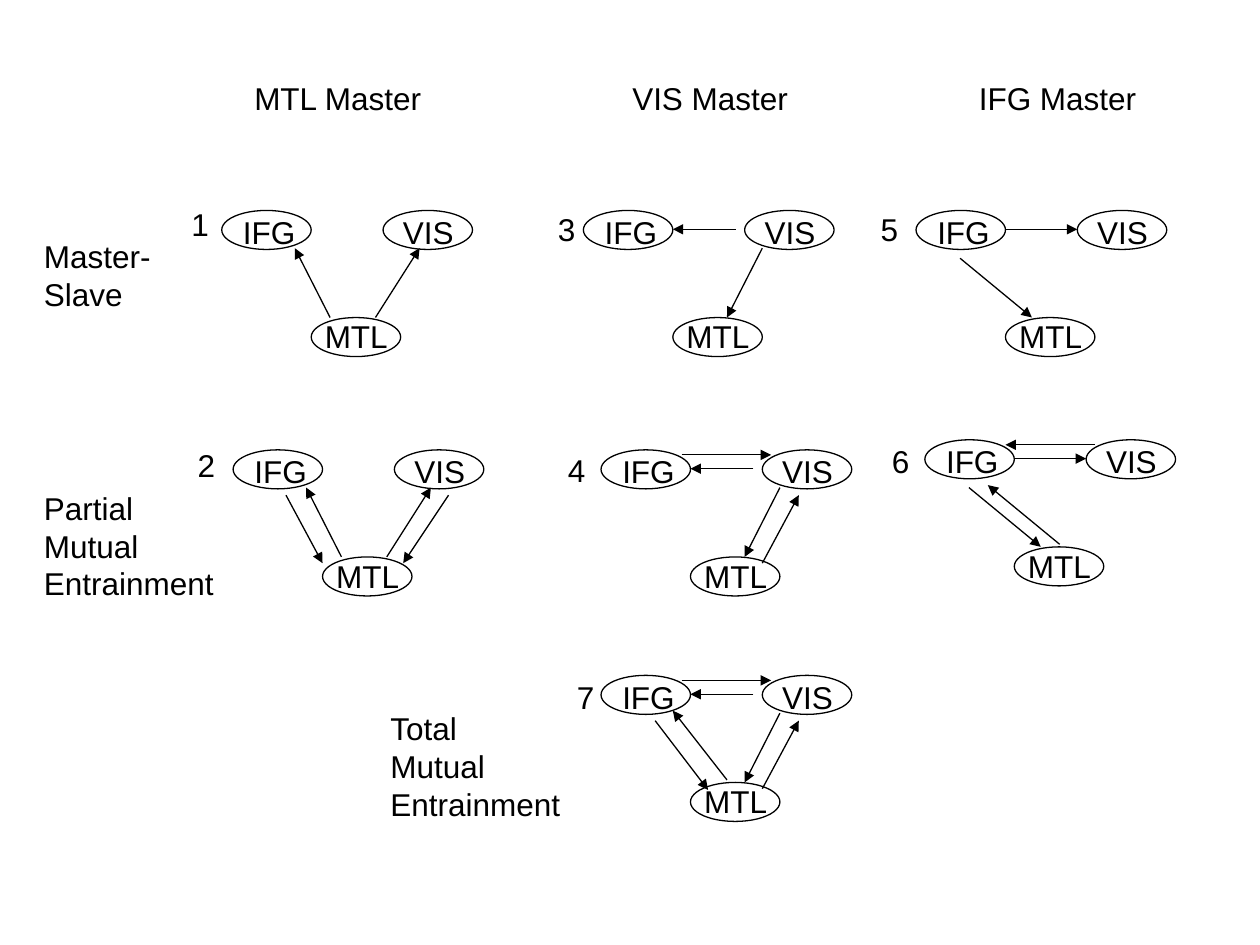
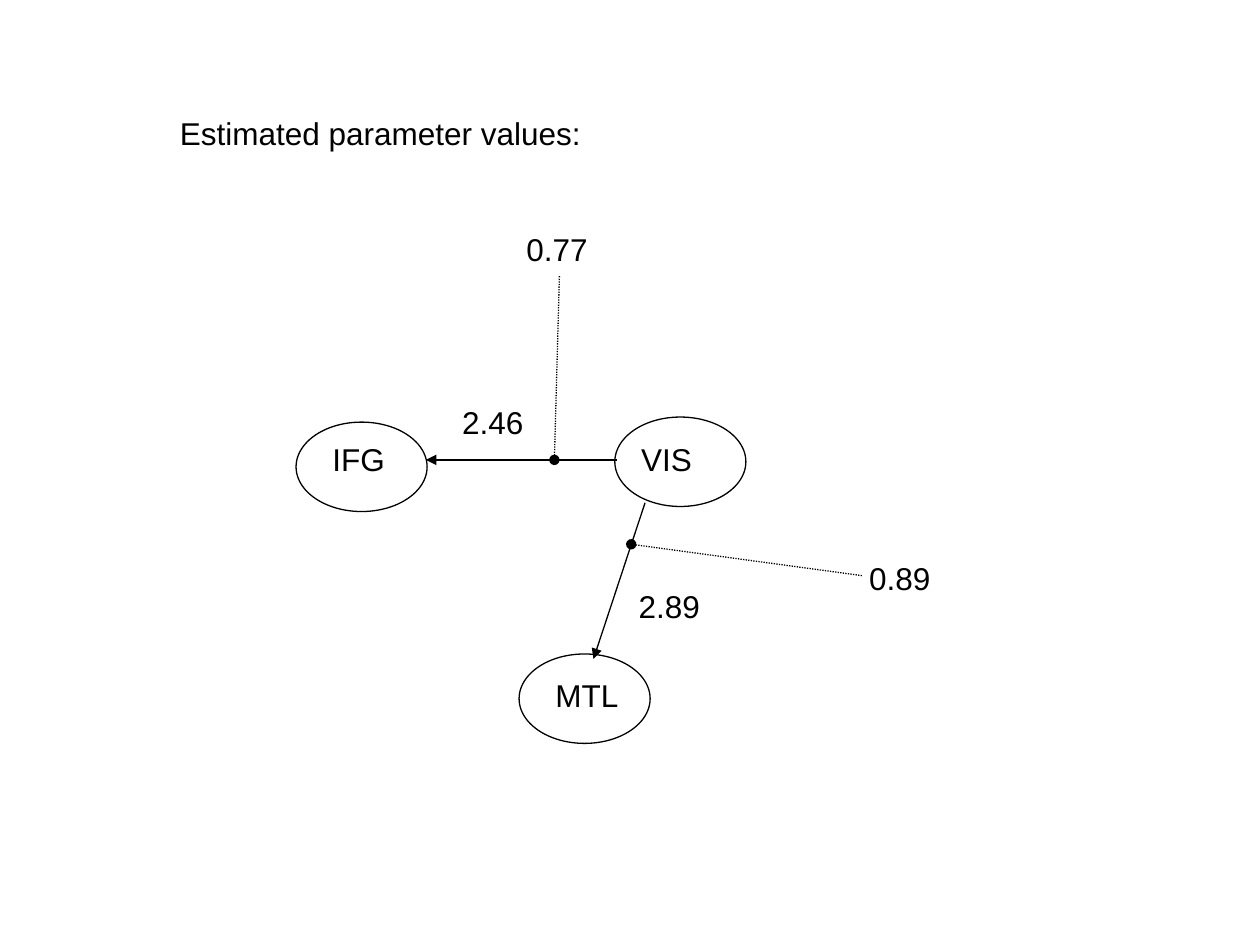
from lxml import etree
from pptx import Presentation
from pptx.dml.color import RGBColor
from pptx.enum.dml import MSO_LINE
from pptx.enum.shapes import MSO_CONNECTOR, MSO_SHAPE
from pptx.oxml.ns import qn
from pptx.util import Inches, Pt

OVAL = MSO_SHAPE.OVAL
STRAIGHT = MSO_CONNECTOR.STRAIGHT
DOTS = MSO_LINE.ROUND_DOT
COLORS = {"ink": "000000"}
INK = RGBColor.from_string(COLORS["ink"])
FONT = "Arial"
SIZE = 18
THIN = 0.75

deck = Presentation()
deck.slide_width, deck.slide_height = Inches(10), Inches(7.5)
blank = deck.slide_layouts[6]


def put(slide, text, x, y, w, ring=None, size=SIZE):
    """Write lines of text at x, y; ring is an outline ellipse (x, y, w, h)."""
    lines = text.split("\n")
    box = slide.shapes.add_textbox(
        Inches(x), Inches(y), Inches(w), Inches(0.1 + 0.3 * len(lines)))
    frame = box.text_frame
    frame.word_wrap = False
    for i, line in enumerate(lines):
        para = frame.add_paragraph() if i else frame.paragraphs[0]
        run = para.add_run()
        run.text = line
        run.font.name, run.font.size = FONT, Pt(size)
        run.font.color.rgb = INK
    if ring:
        oval = slide.shapes.add_shape(OVAL, *[Inches(v) for v in ring])
        oval.shadow.inherit = False
        oval.fill.background()
        oval.line.color.rgb = INK
        oval.line.width = Pt(THIN)


def link(slide, x1, y1, x2, y2, dot=False):
    """Draw an arrow, or a dotted leader that starts with a dot."""
    line = slide.shapes.add_connector(
        STRAIGHT, Inches(x1), Inches(y1), Inches(x2), Inches(y2))
    line.line.color.rgb = INK
    line.line.width = Pt(THIN)
    if dot:
        line.line.dash_style = DOTS
    props = line._element.spPr
    end, kind = ("a:headEnd", "oval") if dot else ("a:tailEnd", "triangle")
    etree.SubElement(props.find(qn("a:ln")), qn(end), type=kind)
    etree.SubElement(props, qn("a:effectLst"))


# Slide 1: seven coupling models
slide = deck.slides.add_slide(blank)

# Column heads and row labels
for text, x, y, w in [
    ("MTL Master", 1.92, 0.58, 1.53),
    ("VIS Master", 4.92, 0.58, 1.44),
    ("IFG Master", 7.67, 0.58, 1.45),
    ("Master-\nSlave", 0.25, 1.83, 1.05),
    ("Partial\nMutual\nEntrainment", 0.25, 3.83, 1.55),
    ("Total\nMutual\nEntrainment", 3, 5.58, 1.55),
]:
    put(slide, text, x, y, w)

# Node name, ellipse offset, text offset and text width within a model
nodes = [
    ("IFG", 0, 0, 0.07, -0.03, 0.62),
    ("VIS", 1.28, 0, 1.34, -0.03, 0.6),
    ("MTL", 0.71, 0.85, 0.72, 0.8, 0.7),
]

# Arrows as offsets within a model: from each master, and back to it
from_mtl = [(1.22, 0.85, 1.57, 0.3), (0.86, 0.85, 0.58, 0.3)]
to_mtl = [(1.71, 0.36, 1.35, 0.9), (0.42, 0.36, 0.71, 0.9)]
from_vis = [(1.21, 0.15, 0.71, 0.15), (1.42, 0.3, 1.14, 0.85)]
to_vis = [(0.64, 0.04, 1.35, 0.04), (1.28, 0.9, 1.57, 0.36)]
from_ifg = [(0.71, 0.15, 1.28, 0.15), (0.35, 0.38, 0.92, 0.85)]
to_ifg = [(1.35, 0.04, 0.64, 0.04), (1.07, 0.83, 0.5, 0.36)]
cross = [(1, 0.83, 0.57, 0.28), (0.43, 0.36, 0.85, 0.91)]

# Model origin, place of its number, and its arrows
models = [
    (1.76, 1.67, 1.42, 1.58, from_mtl),
    (1.85, 3.57, 1.47, 3.49, from_mtl + to_mtl),
    (4.63, 1.67, 4.33, 1.62, from_vis),
    (4.77, 3.57, 4.41, 3.53, from_vis + to_vis),
    (7.27, 1.67, 6.89, 1.62, from_ifg),
    (7.34, 3.49, 6.98, 3.46, from_ifg + to_ifg),
    (4.77, 5.36, 4.48, 5.33, from_vis + to_vis + cross),
]
for num, (x, y, nx, ny, arrows) in enumerate(models, 1):
    put(slide, str(num), nx, ny, 0.34)
    for name, dx, dy, tx, ty, w in nodes:
        put(slide, name, x + tx, y + ty, w, ring=(x + dx, y + dy, 0.71, 0.31))
    for x1, y1, x2, y2 in arrows:
        link(slide, x + x1, y + y1, x + x2, y + y2)

# Slide 2: estimated values of the chosen model
slide = deck.slides.add_slide(blank)
put(slide, "Estimated parameter values:", 1.33, 0.86, 3.41)

# Nodes
for name, x, y, w, left, top in [
    ("IFG", 2.54, 3.44, 0.77, 2.35, 3.35),
    ("VIS", 4.99, 3.44, 0.6, 4.88, 3.31),
    ("MTL", 4.31, 5.32, 0.7, 4.12, 5.19),
]:
    put(slide, name, x, y, w, ring=(left, top, 1.04, 0.71))

# Arrows and dotted leaders
link(slide, 4.9, 3.65, 3.38, 3.65)
link(slide, 5.12, 3.99, 4.71, 5.23)
link(slide, 5.01, 4.32, 6.85, 4.57, dot=True)
link(slide, 4.4, 3.65, 4.44, 2.19, dot=True)

# Values
for value, x, y in [
    ("2.89", 4.97, 4.61),
    ("2.46", 3.57, 3.15),
    ("0.89", 6.8, 4.39),
    ("0.77", 4.08, 1.78),
]:
    put(slide, value, x, y, 0.69)

deck.save("out.pptx")
